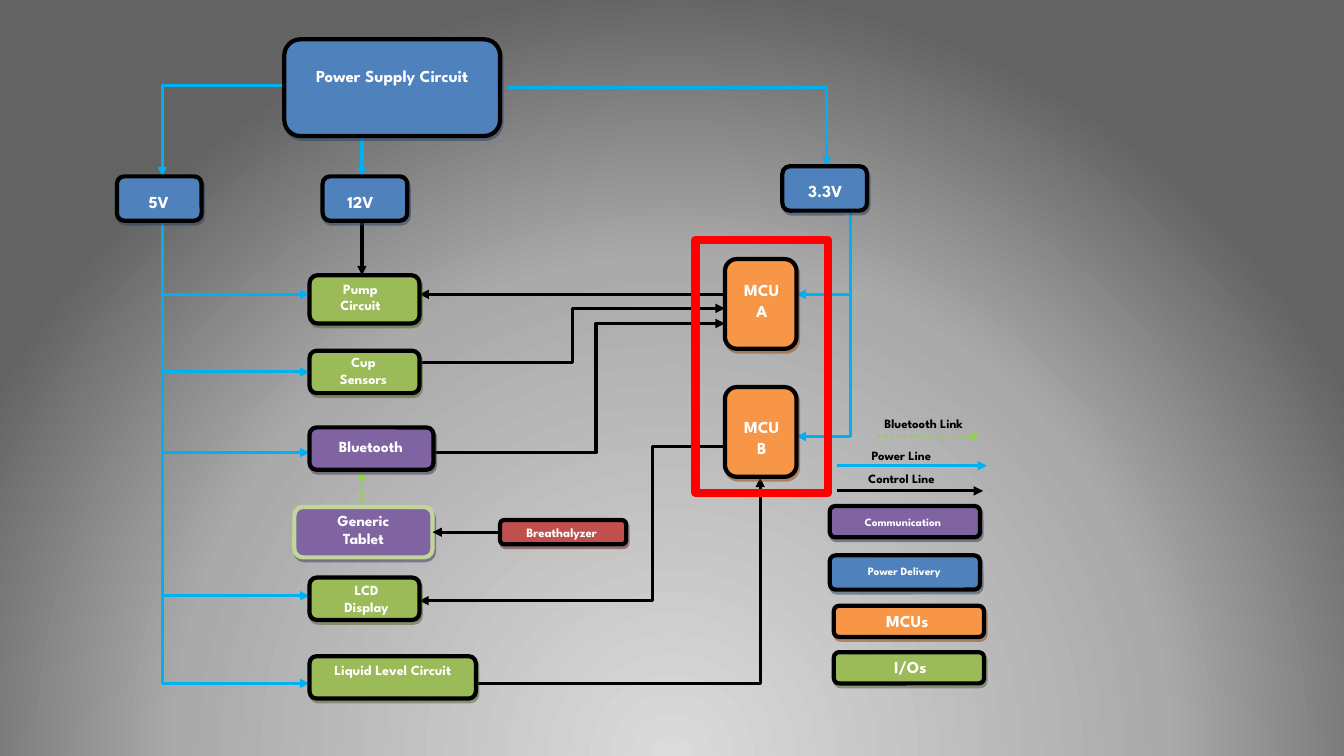
from itertools import pairwise

from pptx import Presentation
from pptx.dml.color import RGBColor as RGB
from pptx.enum.dml import MSO_LINE as DASH
from pptx.enum.shapes import MSO_CONNECTOR as LINK, MSO_SHAPE as SHAPE
from pptx.enum.text import PP_ALIGN as ALIGN
from pptx.oxml import parse_xml
from pptx.oxml.ns import nsdecls, qn
from pptx.util import Pt

PX = 9144  # 100 px to the inch
FONT = "League Spartan"
BLACK, WHITE, RED = RGB(0, 0, 0), RGB(255, 255, 255), RGB(255, 0, 0)
SKY, LIME, PALE = RGB(0, 176, 240), RGB(146, 208, 80), RGB(194, 214, 155)
GLOW = [(0, RGB(219, 219, 219)), (64, RGB(170, 170, 170)), (100, RGB(99, 99, 99))]

# kind: fill, shadow
KINDS = {
    "power": (RGB(79, 129, 189), RGB(36, 63, 96)),
    "mcu": (RGB(247, 150, 70), RGB(151, 71, 6)),
    "io": (RGB(155, 187, 89), RGB(78, 97, 40)),
    "comm": (RGB(128, 100, 162), RGB(63, 49, 81)),
    "test": (RGB(192, 80, 77), RGB(98, 36, 35)),
}

# kind, box, lines of text, point size, label area
BLOCKS = [
    ("mcu", (719, 257, 71, 89), ["MCU", "A"], 12, (690, 273, 131, 58)),
    ("mcu", (719, 384, 71, 89), ["MCU", "B"], 12, (690, 409, 131, 53)),
    ("io", (307, 273, 109, 48), ["Pump", "Circuit"], 10, (292, 273, 131, 53)),
    ("io", (307, 348, 109, 42), ["Cup", "Sensors"], 10, (292, 346, 137, 58)),
    ("comm", (307, 424, 123, 42), ["Bluetooth"], 11, (298, 429, 140, 58)),
    ("io", (307, 573, 109, 42), ["LCD", "Display"], 10, (298, 572, 131, 60)),
    ("io", (307, 651, 165, 42), ["Liquid Level Circuit"], 10, (307, 651, 165, 58)),
    ("comm", (292, 503, 137, 50), ["Generic", "Tablet"], 11, (292, 502, 137, 58)),
    ("power", (116, 175, 84, 44), ["5V"], 12, (92, 185, 131, 35)),
    ("power", (282, 39, 214, 96), ["Power Supply Circuit"], 12, (282, 60, 214, 75)),
    ("power", (320, 175, 84, 44), ["12V"], 12, (292, 185, 131, 35)),
    ("power", (776, 165, 84, 44), ["3.3V"], 12, (753, 174, 131, 35)),
    ("test", (496, 516, 125, 24), ["Breathalyzer"], 9, (481, 516, 152, 44)),
    ("power", (823, 551, 149, 34), ["Power Delivery"], 8, (815, 555, 164, 41)),
    ("io", (827, 647, 149, 31), ["I/Os"], 12, (830, 647, 146, 38)),
    ("mcu", (827, 601, 149, 31), ["MCUs"], 12, (827, 601, 146, 41)),
    ("comm", (823, 502, 149, 31), ["Communication"], 8, (812, 506, 167, 36)),
]

# colour, start, end
STRAIGHT = [
    (SKY, (359, 135), (359, 175)),
    (BLACK, (359, 219), (359, 273)),
    (BLACK, (719, 292), (416, 292)),
    (LIME, (359, 497), (359, 466)),
    (BLACK, (830, 487), (975, 487)),
    (SKY, (830, 462), (979, 462)),
    (LIME, (871, 433), (972, 433)),
]
# colour, start, end, x of the upright part
BENT = [
    (SKY, (503, 87), (820, 165), 820),
    (SKY, (282, 85), (161, 175), 161),
    (BLACK, (416, 360), (719, 306), 568),
    (BLACK, (416, 449), (719, 321), 591),
    (BLACK, (719, 443), (416, 596), 647),
    (BLACK, (416, 678), (754, 474), 754),
]
# x of the bus, x of its arrow tips, heights from the top
BUSES = [
    (161, 307, [219, 292, 369, 449, 591, 678]),
    (844, 790, [209, 292, 433]),
]
LEGEND = [
    ("Bluetooth Link", (812, 408, 208, 35)),
    ("Power Line", (790, 439, 208, 35)),
    ("Control Line", (790, 462, 208, 35)),
]
FRAME = (690, 238, 131, 251)


def emu(box):
    return [n * PX for n in box]


def put(item, vals):
    for name, val in vals.items():
        setattr(item, name, val)


def stroke(line, color, width):
    line.color.rgb = color
    line.width = Pt(width)


def paint(slide):
    """Fill the background with a round gradient centred below the slide."""
    slide.background.fill.gradient()
    old = slide.element.find(".//" + qn("a:gradFill"))
    stops = "".join(f'<a:gs pos="{at * 1000}"><a:srgbClr val="{color}"/></a:gs>'
                    for at, color in GLOW)
    new = parse_xml(
        f'<a:gradFill {nsdecls("a")} rotWithShape="1"><a:gsLst>{stops}</a:gsLst>'
        '<a:path path="circle"><a:fillToRect l="50000" t="130000" r="50000" '
        'b="-30000"/></a:path></a:gradFill>')
    old.getparent().replace(old, new)


def arrow(shapes, color, start, end, bend=None):
    kind = LINK.STRAIGHT if bend is None else LINK.ELBOW
    link = shapes.add_connector(kind, *emu(start + end))
    stroke(link.line, color, 2.25)
    if color == LIME:
        link.line.dash_style = DASH.ROUND_DOT
    props = link.element.spPr
    if bend is not None:
        ratio = round((bend - start[0]) / (end[0] - start[0]) * 100000)
        geom = props.find(qn("a:prstGeom"))
        for old in list(geom):
            geom.remove(old)
        geom.append(parse_xml(f'<a:avLst {nsdecls("a")}>'
                              f'<a:gd name="adj1" fmla="val {ratio}"/></a:avLst>'))
    props.find(qn("a:ln")).append(
        parse_xml(f'<a:tailEnd {nsdecls("a")} type="triangle"/>'))
    props.append(parse_xml(f'<a:effectLst {nsdecls("a")}/>'))
    return link


def block(shapes, kind, box, edge):
    fill, shade = KINDS[kind]
    shape = shapes.add_shape(SHAPE.ROUNDED_RECTANGLE, *emu(box))
    shape.fill.solid()
    shape.fill.fore_color.rgb = fill
    stroke(shape.line, edge, 3)
    shape.element.spPr.append(parse_xml(
        f'<a:effectLst {nsdecls("a")}><a:outerShdw dist="28400" dir="3800000" '
        f'algn="ctr" rotWithShape="0"><a:srgbClr val="{shade}">'
        '<a:alpha val="50000"/></a:srgbClr></a:outerShdw></a:effectLst>'))
    return shape


def label(shapes, lines, size, area, color=WHITE):
    frame = shapes.add_textbox(*emu(area)).text_frame
    frame.word_wrap = True
    frame.text = "\n".join(lines)
    for para in frame.paragraphs:
        para.alignment = ALIGN.CENTER
        font = para.runs[0].font
        put(font, {"name": FONT, "size": Pt(size), "bold": True})
        font.color.rgb = color


def main():
    deck = Presentation()
    put(deck, {"slide_width": 1333 * PX, "slide_height": 750 * PX})
    slide = deck.slides.add_slide(deck.slide_layouts[6])
    shapes = slide.shapes
    paint(slide)

    for row in STRAIGHT + BENT:
        arrow(shapes, *row)
    for bus, tip, stops in BUSES:
        for top, low in pairwise(stops):
            arrow(shapes, SKY, (bus, top), (tip, low), bus)

    made = {}
    for kind, box, lines, *_ in BLOCKS:
        edge = PALE if "Tablet" in lines else BLACK
        made[lines[-1]] = block(shapes, kind, box, edge)
    link = arrow(shapes, BLACK, (496, 528), (429, 528))
    link.begin_connect(made["Breathalyzer"], 1)
    link.end_connect(made["Tablet"], 3)

    for _, _, lines, size, area in BLOCKS:
        label(shapes, lines, size, area)
    for text, area in LEGEND:
        label(shapes, [text], 9, area, BLACK)

    frame = shapes.add_shape(SHAPE.RECTANGLE, *emu(FRAME))
    frame.shadow.inherit = False
    frame.fill.background()
    stroke(frame.line, RED, 6)
    deck.save("out.pptx")


if __name__ == "__main__":
    main()
